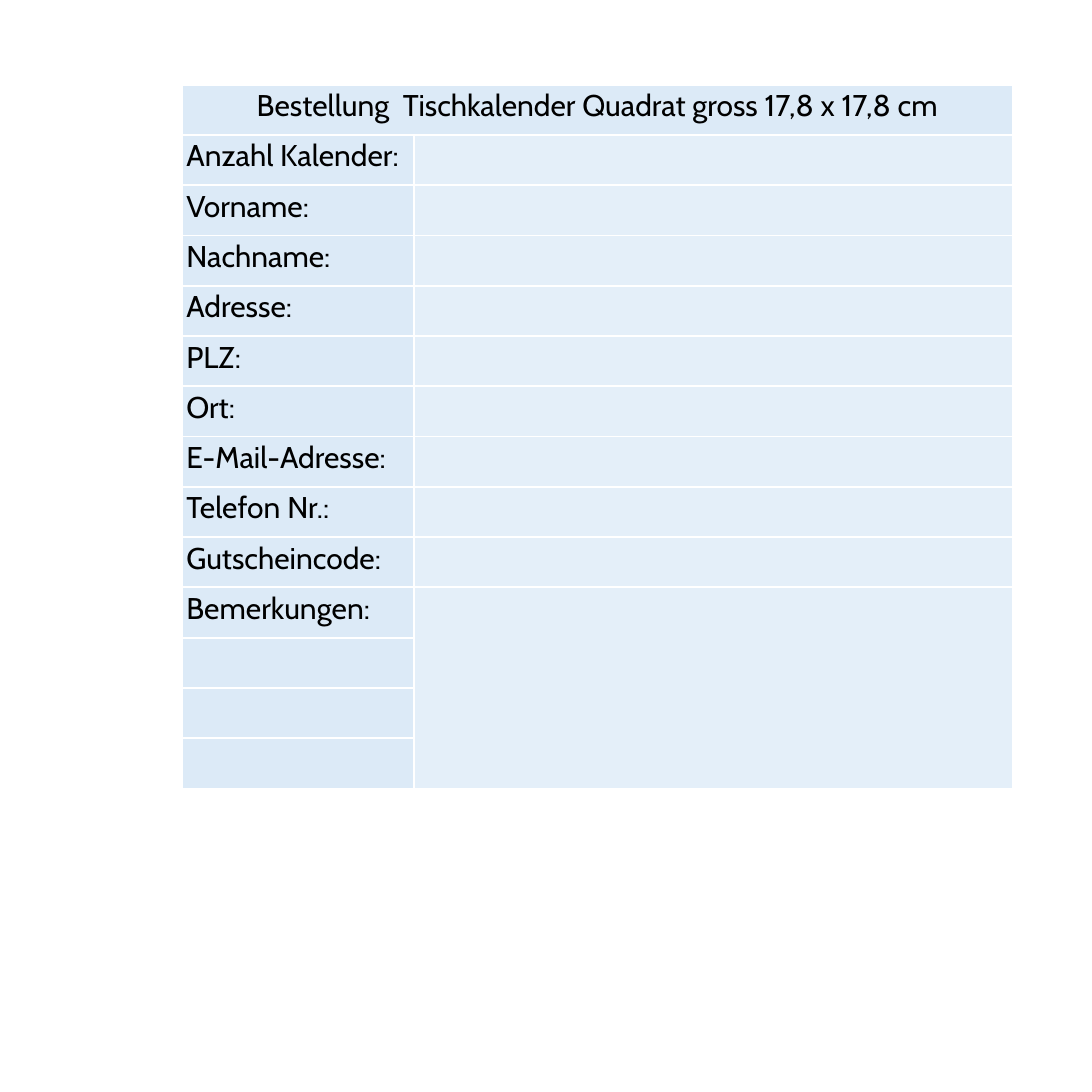
from dataclasses import dataclass

from lxml import etree
from pptx import Presentation
from pptx.dml import color
from pptx.enum import text as txt
from pptx.oxml import ns
from pptx.util import Inches, Pt


@dataclass(frozen=True)
class Theme:
    font: str = "Cabin"
    size: int = 14
    ink: str = "000000"
    pale: str = "DCEAF7"
    rule: str = "FFFFFF"
    line: int = 1
    alpha: int = 75


THEME = Theme()
TITLE = "Bestellung  Tischkalender Quadrat gross 17,8 x 17,8 cm"
LABELS = [
    "Anzahl Kalender:", "Vorname:", "Nachname:", "Adresse:", "PLZ:", "Ort:",
    "E-Mail-Adresse:", "Telefon Nr.:", "Gutscheincode:", "Bemerkungen:",
]
NOTES = 4


def write(cell, words, align=txt.PP_ALIGN.LEFT):
    cell.margin_left = cell.margin_right = Inches(0.03)
    cell.margin_top = cell.margin_bottom = Inches(0.02)
    cell.vertical_anchor = txt.MSO_ANCHOR.TOP
    para = cell.text_frame.paragraphs[0]
    para.alignment = align
    if not words:
        etree.SubElement(para._p, ns.qn("a:endParaRPr"), sz=str(THEME.size * 100))
        return
    run = para.add_run()
    run.text = words
    run.font.name = THEME.font
    run.font.size = Pt(THEME.size)
    run.font.bold = False
    run.font.color.rgb = color.RGBColor.from_string(THEME.ink)


def border(cell):
    props = cell._tc.get_or_add_tcPr()
    for spot, side in enumerate(("lnL", "lnR", "lnT", "lnB")):
        line = etree.Element(ns.qn(f"a:{side}"), w=str(Pt(THEME.line)))
        fill = etree.SubElement(line, ns.qn("a:solidFill"))
        etree.SubElement(fill, ns.qn("a:srgbClr"), val=THEME.rule)
        props.insert(spot, line)


def paint(cell, alpha=100):
    cell.fill.solid()
    cell.fill.fore_color.rgb = color.RGBColor.from_string(THEME.pale)
    if alpha < 100:
        tone = cell._tc.tcPr.find(".//" + ns.qn("a:srgbClr"))
        etree.SubElement(tone, ns.qn("a:alpha"), val=str(alpha * 1000))
    border(cell)


def add_form(slide):
    count = len(LABELS) + NOTES
    frame = slide.shapes.add_table(
        count, 2, Inches(1.18), Inches(0.55), Inches(5.4), Inches(4.57))
    table = frame.table
    table.first_row = table.horz_banding = False
    for col, width in zip(table.columns, (1.51, 3.89)):
        col.width = Inches(width)
    for row in table.rows:
        row.height = Inches(4.57 / count)

    table.cell(0, 0).merge(table.cell(0, 1))
    table.cell(count - NOTES, 1).merge(table.cell(count - 1, 1))
    names = [TITLE] + LABELS + [""] * (NOTES - 1)
    for index, name in enumerate(names):
        label, field = table.cell(index, 0), table.cell(index, 1)
        align = txt.PP_ALIGN.LEFT if index else txt.PP_ALIGN.CENTER
        write(label, name, align=align)
        write(field, "")
        paint(label)
        paint(field, alpha=THEME.alpha if index else 100)


def main():
    deck = Presentation()
    deck.slide_width = deck.slide_height = Inches(7.09)
    slide = deck.slides.add_slide(deck.slide_layouts[6])
    add_form(slide)
    deck.save("out.pptx")


if __name__ == "__main__":
    main()
